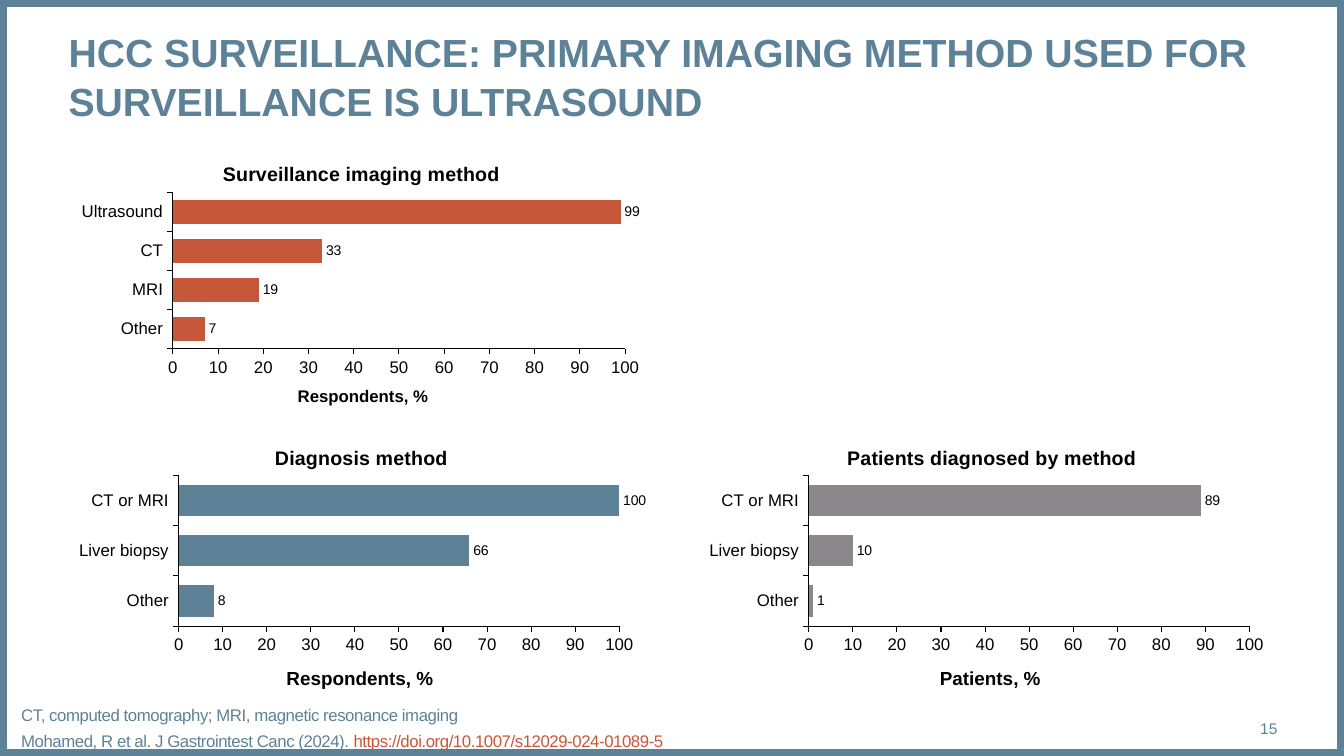
from lxml.etree import SubElement as Sub
from pptx import Presentation
from pptx.chart.data import CategoryChartData as Data
from pptx.dml.color import RGBColor as RGB
from pptx.enum.chart import XL_CHART_TYPE as Kind, XL_LABEL_POSITION as Spot, XL_TICK_MARK as Tick
from pptx.enum.shapes import MSO_SHAPE as Shape
from pptx.enum.text import MSO_ANCHOR as Anchor, MSO_AUTO_SIZE as Auto, PP_ALIGN as Align
from pptx.oxml.ns import qn
from pptx.util import Inches, Pt

BLUE, RUST, GREY, BLACK = "5D8298", "C6573B", "8B878B", "000000"
WIDE, HIGH = 13.33, 7.5
LEFT, RIGHT = 0.68, 6.93
TESTS = ["Other", "Liver biopsy", "CT or MRI"]
LOW = (0.19, 0.18, 0.76, 0.53)
CHARTS = [
    dict(at=(LEFT, 1.4), cats=["Other", "MRI", "CT", "Ultrasound"], vals=[7, 19, 33, 99],
         hue=RUST, head="Surveillance imaging method", unit="Respondents, %", size=12,
         plot=(0.18, 0.18, 0.78, 0.55), spots=[(0.26, 0.06), (0.39, 0.85)]),
    dict(at=(LEFT, 4.21), cats=TESTS, vals=[8, 66, 100],
         hue=BLUE, head="Diagnosis method", unit="Respondents, %", size=13.5,
         plot=LOW, spots=[(0.35, 0.06), (0.37, 0.84)]),
    dict(at=(RIGHT, 4.21), cats=TESTS, vals=[1, 10, 89],
         hue=GREY, head="Patients diagnosed by method", unit="Patients, %", size=13.5,
         plot=LOW, spots=[(0.25, 0.06), (0.41, 0.84)]),
]


def paint(color, hue):
    """Set a colour from a hex string."""
    color.rgb = RGB.from_string(hue)


def apply(item, **style):
    """Set each format value on an object."""
    for key, value in style.items():
        setattr(item, key, value)


def style(font, size, hue, **more):
    """Format a font."""
    apply(font, name="Arial", size=Pt(size), **more)
    paint(font.color, hue)


def move(shape, *box):
    """Place a shape by left, top, width and height in inches."""
    for key, value in zip(("left", "top", "width", "height"), box):
        setattr(shape, key, Inches(value))


def setup(shape):
    """Clear the margins of a text shape and return its frame."""
    frame = shape.text_frame
    apply(frame, margin_left=0, margin_top=0, margin_right=0, margin_bottom=0,
          word_wrap=True, auto_size=Auto.NONE, vertical_anchor=Anchor.MIDDLE)
    return frame


def write(para, text, size, hue, **more):
    """Add a formatted run to a paragraph."""
    run = para.add_run()
    run.text = text
    style(run.font, size, hue, **more)
    return run


def add_frame(slide):
    """Draw the border behind everything else."""
    edge = slide.shapes.add_shape(Shape.RECTANGLE, 0, 0, Inches(WIDE), Inches(HIGH))
    edge.shadow.inherit = False
    edge.fill.background()
    paint(edge.line.color, BLUE)
    edge.line.width = Pt(10)
    slide.shapes._spTree.insert(2, edge._element)


def add_title(slide, text):
    """Fill the title placeholder."""
    shape = slide.shapes.title
    move(shape, LEFT, 0.28, 11.99, 0.94)
    para = setup(shape).paragraphs[0]
    apply(para, alignment=Align.LEFT, line_spacing=1.04)
    write(para, text, 28, BLUE, bold=True)


def add_notes(slide, lines):
    """Fill the body placeholder with source lines of text and hue pairs."""
    shape = slide.placeholders[1]
    move(shape, 0.21, 7.02, 11.13, 0.4)
    frame = setup(shape)
    for i, parts in enumerate(lines):
        para = frame.add_paragraph() if i else frame.paragraphs[0]
        props = para._p.get_or_add_pPr()
        for key in ("marL", "indent"):
            props.set(key, "0")
        Sub(props, qn("a:buNone"))
        para.space_before = Pt(4 if i else 0)
        for text, hue in parts:
            run = write(para, text, 12, hue, underline=hue == RUST)
            run._r.get_or_add_rPr().set("spc", "-30")


def add_page(slide, text):
    """Write the page number."""
    box = slide.shapes.add_textbox(0, 0, 0, 0)
    move(box, 11.81, 7.03, 0.86, 0.4)
    para = setup(box).paragraphs[0]
    para.alignment = Align.RIGHT
    write(para, text, 11, BLUE)


def place(node, index, spot, inner=False):
    """Give a chart part a manual layout in fractions of the chart."""
    for old in node.findall(qn("c:layout")):
        node.remove(old)
    outer = node.makeelement(qn("c:layout"), {})
    node.insert(index, outer)
    layout = Sub(outer, qn("c:manualLayout"))
    if inner:
        Sub(layout, qn("c:layoutTarget")).set("val", "inner")
    for key in ("xMode", "yMode"):
        Sub(layout, qn("c:" + key)).set("val", "edge")
    for key, value in zip("xywh", spot):
        Sub(layout, qn("c:" + key)).set("val", str(value))


def add_bars(slide, at, cats, vals, hue, head, unit, size, plot, spots):
    """Add a titled bar chart of percentages."""
    data = Data()
    data.categories = cats
    data.add_series("Series 1", vals)
    box = [Inches(v) for v in (*at, 5.75, 2.82)]
    chart = slide.shapes.add_chart(Kind.BAR_CLUSTERED, *box, data).chart
    chart.has_legend = False
    style(chart.font, 10, BLACK)
    cat, val = chart.category_axis, chart.value_axis
    apply(val, minimum_scale=0, maximum_scale=100, major_unit=10)
    for axis in (cat, val):
        apply(axis, has_major_gridlines=False, major_tick_mark=Tick.OUTSIDE,
              minor_tick_mark=Tick.NONE)
        style(axis.tick_labels.font, 12, BLACK)
        paint(axis.format.line.color, BLACK)
        axis.format.line.width = Pt(0.75)
    for title, text, points in ((chart.chart_title, head, 14), (val.axis_title, unit, size)):
        write(title.text_frame.paragraphs[0], text, points, BLACK, bold=True)
    for node, spot in zip(chart._chartSpace.iter(qn("c:title")), spots):
        place(node, 1, spot)
    place(next(chart._chartSpace.iter(qn("c:plotArea"))), 0, plot, True)
    bars = chart.plots[0]
    apply(bars, gap_width=60, vary_by_categories=False, has_data_labels=True)
    apply(bars.data_labels, show_value=True, position=Spot.OUTSIDE_END)
    style(bars.data_labels.font, 10, BLACK)
    fill = bars.series[0].format.fill
    fill.solid()
    paint(fill.fore_color, hue)


def main():
    """Build the slide and save it."""
    deck = Presentation()
    apply(deck, slide_width=Inches(WIDE), slide_height=Inches(HIGH))
    slide = deck.slides.add_slide(deck.slide_layouts[1])
    add_frame(slide)
    add_title(slide, "HCC SURVEILLANCE: PRIMARY IMAGING METHOD USED FOR "
                     "SURVEILLANCE IS ULTRASOUND")
    add_page(slide, "15")
    add_notes(slide, [
        [("CT, computed tomography; MRI, magnetic resonance imaging", BLUE)],
        [("Mohamed, R et al. J Gastrointest Canc (2024). ", BLUE),
         ("https://doi.org/10.1007/s12029-024-01089-5", RUST)],
    ])
    for item in CHARTS:
        add_bars(slide, **item)
    deck.save("out.pptx")


if __name__ == "__main__":
    main()
